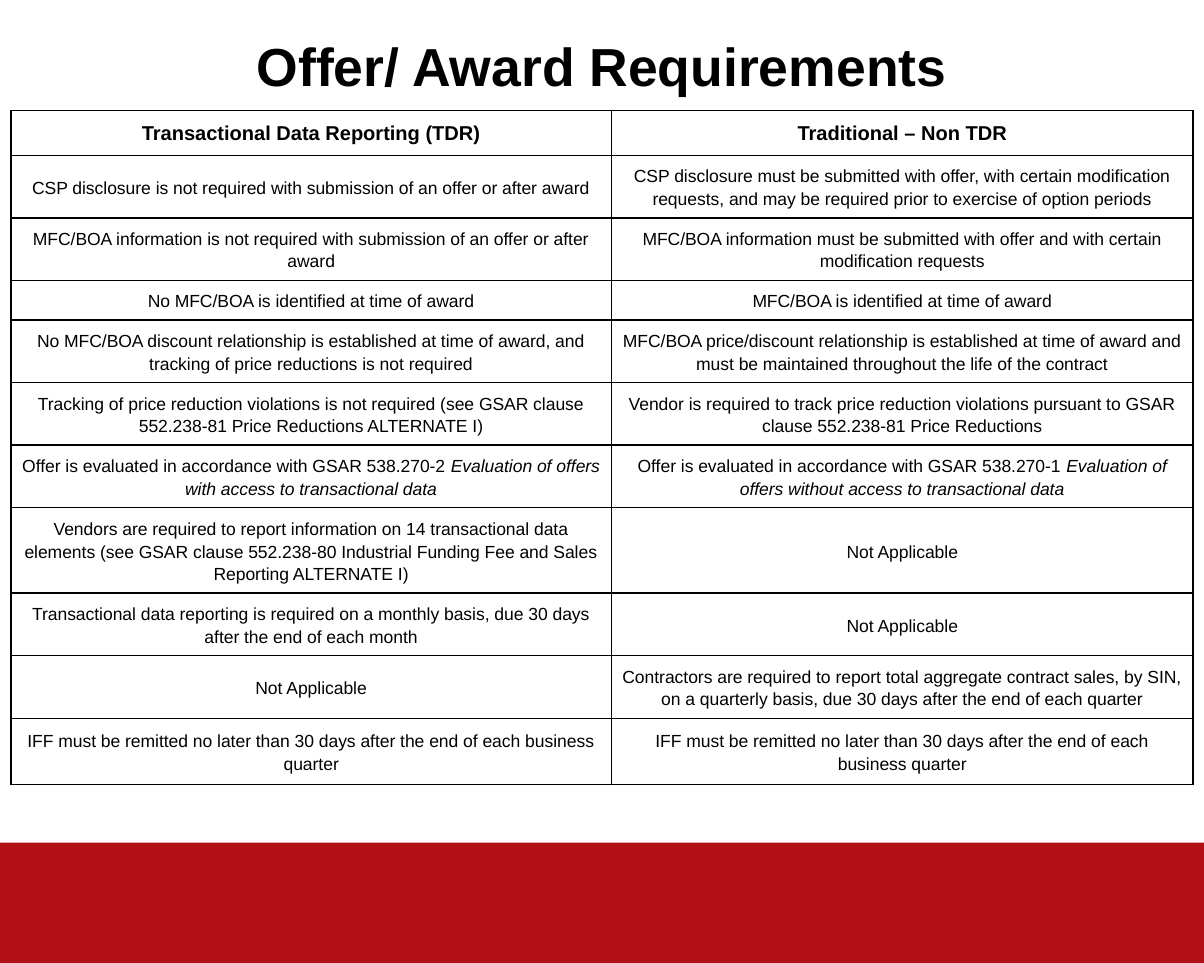
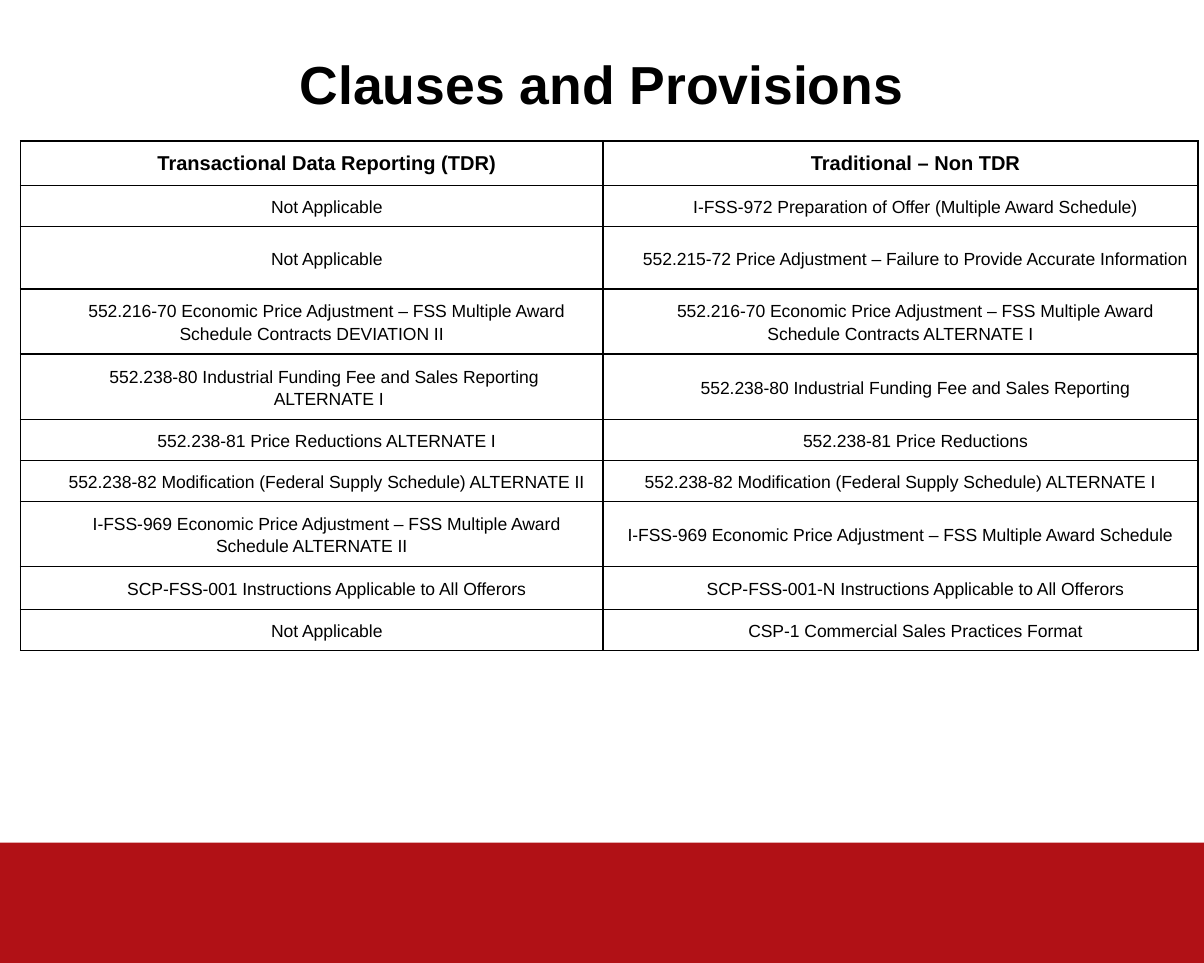
from lxml import etree
from pptx import Presentation
from pptx.dml.color import RGBColor
from pptx.enum.shapes import MSO_SHAPE
from pptx.enum.text import MSO_ANCHOR, PP_ALIGN
from pptx.oxml.ns import qn
from pptx.util import Inches, Pt

RECTANGLE = MSO_SHAPE.RECTANGLE
CENTER = PP_ALIGN.CENTER
TOP, MIDDLE = MSO_ANCHOR.TOP, MSO_ANCHOR.MIDDLE

# Shared style
WIDTH, HEIGHT = Inches(10), Inches(8)
BLACK, RED = "000000", "B11116"
TITLE_FONT = {"name": "Arial", "size": Pt(32), "bold": True}
HEADER_FONT = {"name": "Arial", "size": Pt(12), "bold": True}
BODY_FONT = {"name": "Arial", "size": Pt(10.5), "bold": False}
TITLE_MARGINS = dict.fromkeys(
    ("margin_left", "margin_top", "margin_right", "margin_bottom"), Inches(0.1))
CELL_MARGINS = {"margin_left": Inches(0.08), "margin_right": Inches(0.08),
                "margin_top": Inches(0.07), "margin_bottom": Inches(0.07)}

# Row heights by number of text lines
HEADER, ONE, TWO, THREE = 0.37, 0.33, 0.52, 0.71

COLUMN_HEADS = (HEADER, "Transactional Data Reporting (TDR)", "Traditional – Non TDR")
NOT_APPLICABLE = "Not Applicable"
IFF_RULE = "IFF must be remitted no later than 30 days after the end of each business quarter"

# Rows are (height, TDR, non TDR); text between bars is italic
COMPARISONS = [
    {
        "title": "Offer/ Award Requirements",
        "title_top": 0.17, "title_height": 0.51,
        "left": 0.09, "top": 0.92, "columns": (4.99, 4.83),
        "indent": 0, "flush_cells": (),
        "rows": [
            COLUMN_HEADS,
            (TWO, "CSP disclosure is not required with submission of an offer or after award",
             "CSP disclosure must be submitted with offer, with certain modification requests, "
             "and may be required prior to exercise of option periods"),
            (TWO, "MFC/BOA information is not required with submission of an offer or after award",
             "MFC/BOA information must be submitted with offer and with certain "
             "modification requests"),
            (ONE, "No MFC/BOA is identified at time of award",
             "MFC/BOA is identified at time of award"),
            (TWO, "No MFC/BOA discount relationship is established at time of award, "
             "and tracking of price reductions is not required",
             "MFC/BOA price/discount relationship is established at time of award "
             "and must be maintained throughout the life of the contract"),
            (TWO, "Tracking of price reduction violations is not required "
             "(see GSAR clause 552.238-81 Price Reductions ALTERNATE I)",
             "Vendor is required to track price reduction violations pursuant to "
             "GSAR clause 552.238-81 Price Reductions"),
            (TWO, "Offer is evaluated in accordance with GSAR 538.270-2 "
             "|Evaluation of offers with access to transactional data|",
             "Offer is evaluated in accordance with GSAR 538.270-1 "
             "|Evaluation of offers without access to transactional data|"),
            (THREE, "Vendors are required to report information on 14 transactional data "
             "elements (see GSAR clause 552.238-80 Industrial Funding Fee and Sales "
             "Reporting ALTERNATE I)", NOT_APPLICABLE),
            (TWO, "Transactional data reporting is required on a monthly basis, "
             "due 30 days after the end of each month", NOT_APPLICABLE),
            (TWO, NOT_APPLICABLE,
             "Contractors are required to report total aggregate contract sales, by SIN, "
             "on a quarterly basis, due 30 days after the end of each quarter"),
            (0.55, IFF_RULE, IFF_RULE),
        ],
    },
    {
        "title": "Clauses and Provisions",
        "title_top": 0.32, "title_height": 1.33,
        "left": 0.17, "top": 1.17, "columns": (4.84, 4.94),
        "indent": 0.25, "flush_cells": ((6, 1), (7, 1)),
        "rows": [
            COLUMN_HEADS,
            (ONE, NOT_APPLICABLE, "I-FSS-972 Preparation of Offer (Multiple Award Schedule)"),
            (TWO, NOT_APPLICABLE,
             "552.215-72 Price Adjustment – Failure to Provide Accurate Information"),
            (TWO, "552.216-70 Economic Price Adjustment – FSS Multiple Award Schedule "
             "Contracts DEVIATION II",
             "552.216-70 Economic Price Adjustment – FSS Multiple Award Schedule "
             "Contracts ALTERNATE I"),
            (TWO, "552.238-80 Industrial Funding Fee and Sales Reporting \n ALTERNATE I",
             "552.238-80 Industrial Funding Fee and Sales Reporting"),
            (ONE, "552.238-81 Price Reductions ALTERNATE I", "552.238-81 Price Reductions"),
            (ONE, "552.238-82 Modification (Federal Supply Schedule) ALTERNATE II",
             "552.238-82 Modification (Federal Supply Schedule) ALTERNATE I"),
            (TWO, "I-FSS-969 Economic Price Adjustment – FSS Multiple Award Schedule "
             "ALTERNATE II",
             "I-FSS-969 Economic Price Adjustment – FSS Multiple Award Schedule"),
            (0.36, "SCP-FSS-001 Instructions Applicable to All Offerors",
             "SCP-FSS-001-N Instructions Applicable to All Offerors"),
            (ONE, NOT_APPLICABLE, "CSP-1 Commercial Sales Practices Format"),
        ],
    },
]


def rgb(hex_code):
    return RGBColor.from_string(hex_code)


def write(frame, text, font_values, spacing=1.0, indent=0):
    """Fill a text frame with centred paragraphs, one per line of text."""
    for number, line in enumerate(text.split("\n")):
        paragraph = frame.add_paragraph() if number else frame.paragraphs[0]
        paragraph.alignment = CENTER
        paragraph.line_spacing = spacing
        if indent:
            properties = paragraph._p.get_or_add_pPr()
            properties.set("marL", "0")
            properties.set("indent", str(Inches(indent)))
        for part, words in enumerate(line.split("|")):
            if words:
                run = paragraph.add_run()
                run.text = words
                run.font.color.rgb = rgb(BLACK)
                run.font.italic = part % 2 == 1
                for key, value in font_values.items():
                    setattr(run.font, key, value)


deck = Presentation()
deck.slide_width, deck.slide_height = WIDTH, HEIGHT
blank = deck.slide_layouts[6]

for comparison in COMPARISONS:
    slide = deck.slides.add_slide(blank)

    # Red band along the bottom eighth
    band = slide.shapes.add_shape(RECTANGLE, 0, HEIGHT * 7 // 8, WIDTH, HEIGHT // 8)
    band.shadow.inherit = False
    band.fill.solid()
    band.fill.fore_color.rgb = rgb(RED)
    band.line.fill.background()

    # Comparison table
    rows, columns = comparison["rows"], comparison["columns"]
    table = slide.shapes.add_table(
        len(rows), len(columns), Inches(comparison["left"]), Inches(comparison["top"]),
        Inches(sum(columns)), Inches(sum(row[0] for row in rows))).table
    table.first_row = table.horz_banding = False
    for column, width in zip(table.columns, columns):
        column.width = Inches(width)

    for r, (height, *texts) in enumerate(rows):
        table.rows[r].height = Inches(height)
        for c, text in enumerate(texts):
            cell = table.cell(r, c)
            for key, value in CELL_MARGINS.items():
                setattr(cell, key, value)
            cell.vertical_anchor = MIDDLE if r else TOP
            indent = 0 if (r, c) in comparison["flush_cells"] else comparison["indent"]
            write(cell.text_frame, text, BODY_FONT if r else HEADER_FONT, 1.15, indent)

            # Borders come before the fill in the cell properties
            cell_properties = cell._tc.get_or_add_tcPr()
            for side in ("a:lnL", "a:lnR", "a:lnT", "a:lnB"):
                border = etree.SubElement(cell_properties, qn(side), w=str(Pt(1)))
                ink = etree.SubElement(border, qn("a:solidFill"))
                etree.SubElement(ink, qn("a:srgbClr"), val=BLACK)
            cell.fill.background()

    # Title
    title = slide.shapes.add_textbox(
        WIDTH // 20, Inches(comparison["title_top"]),
        WIDTH * 9 // 10, Inches(comparison["title_height"])).text_frame
    title.word_wrap = True
    title.vertical_anchor = TOP
    for key, value in TITLE_MARGINS.items():
        setattr(title, key, value)
    write(title, comparison["title"], TITLE_FONT)

deck.save("out.pptx")
